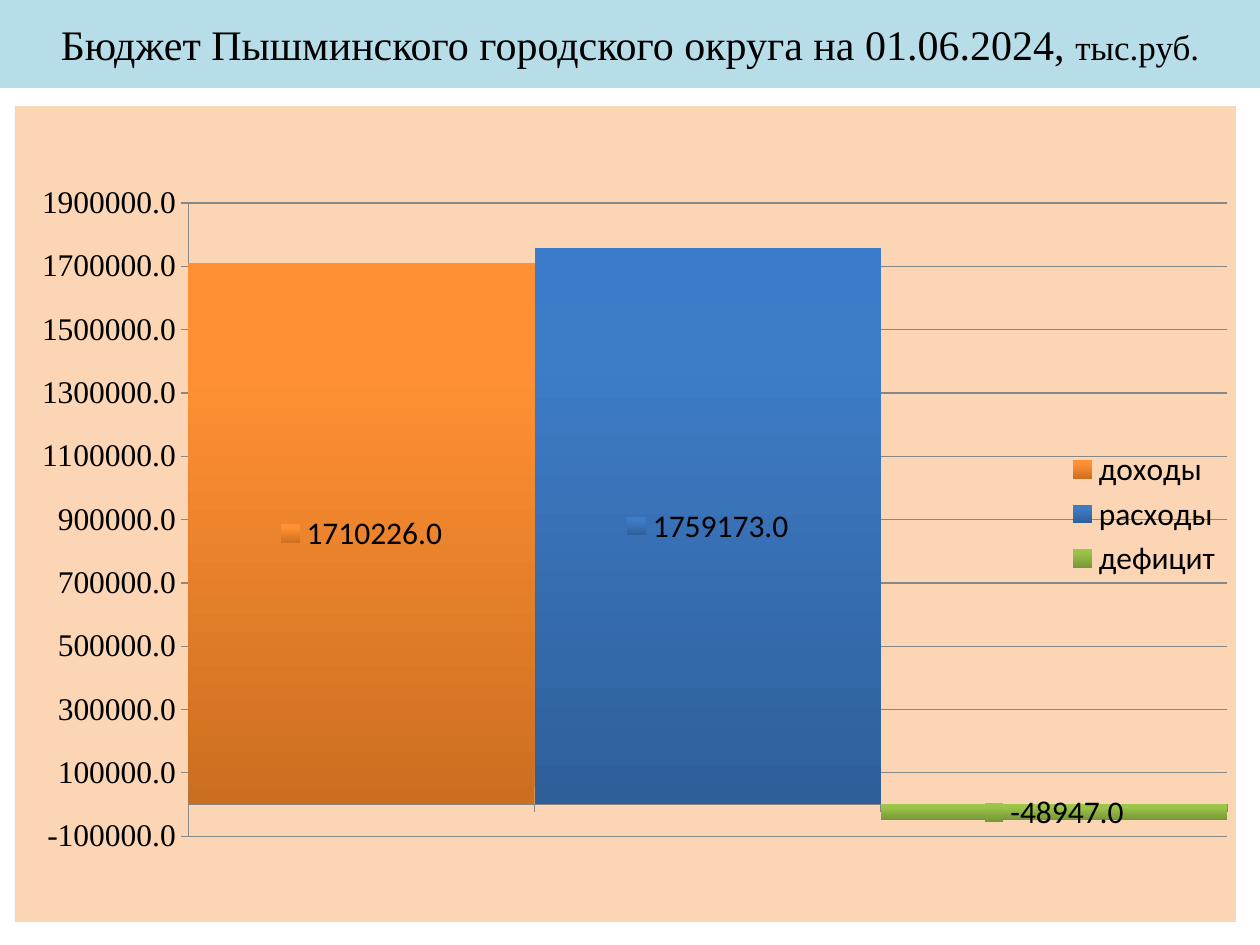
from copy import deepcopy

from lxml.etree import SubElement
from pptx import Presentation
from pptx.chart.data import CategoryChartData
from pptx.dml.color import RGBColor
from pptx.enum.chart import (XL_CHART_TYPE, XL_LABEL_POSITION,
                             XL_LEGEND_POSITION, XL_TICK_LABEL_POSITION,
                             XL_TICK_MARK)
from pptx.enum.text import MSO_ANCHOR, PP_ALIGN
from pptx.oxml import parse_xml
from pptx.oxml.ns import nsdecls, qn
from pptx.util import Pt

EMU_PER_PX = 914400 / 126
SERIF = "Times New Roman"
BUDGET = {"доходы": 1710226, "расходы": 1759173, "дефицит": -48947}
GRADIENTS = [
    ("CC6E20", "FF9034", "FF9136"),
    ("2F5F99", "3D7CC7", "3A7CCB"),
    ("779737", "9BC348", "9DC746"),
]
STOPS = (0, 0.8, 1)
PLOT_LAYOUT = {"x": 0.142, "y": 0.119, "w": 0.851, "h": 0.776}


def px(*lengths):
    return [round(length * EMU_PER_PX) for length in lengths]


def color(hex_text):
    return RGBColor.from_string(hex_text)


def set_font(font, size, name):
    font.size = Pt(size)
    font.name = name
    font.color.rgb = color("000000")


def set_line(line, hex_text):
    line.color.rgb = color(hex_text)
    line.width = Pt(0.75)


def add_title(page):
    title = page.shapes.title
    title.left, title.top, title.width, title.height = px(0, 0, 1260, 88)
    title.fill.solid()
    title.fill.fore_color.rgb = color("B7DEE8")
    frame = title.text_frame
    frame.word_wrap = True
    frame.vertical_anchor = MSO_ANCHOR.MIDDLE
    para = frame.paragraphs[0]
    para.alignment = PP_ALIGN.CENTER
    for text, size in (("Бюджет Пышминского городского округа на 01.06.2024, ", 24),
                       ("тыс.руб.", 20)):
        span = para.add_run()
        span.text = text
        set_font(span.font, size, SERIF)


def fill_columns(series):
    """Give each column its own three-stop vertical gradient."""
    for index, colors in enumerate(GRADIENTS):
        fill = series.points[index].format.fill
        fill.gradient()
        fill.gradient_angle = 90
    for stop_list in series._element.iter(qn("a:gsLst")):
        stop_list.append(deepcopy(stop_list[-1]))
    for index, colors in enumerate(GRADIENTS):
        stops = series.points[index].format.fill.gradient_stops
        for stop, position, hex_text in zip(stops, STOPS, colors):
            stop.position = position
            stop.color.rgb = color(hex_text)


def format_axes(chart):
    category_axis, value_axis = chart.category_axis, chart.value_axis
    category_axis.tick_label_position = XL_TICK_LABEL_POSITION.NONE
    value_axis.minimum_scale = -100000
    value_axis.maximum_scale = 1900000
    value_axis.major_unit = 200000
    value_axis.has_major_gridlines = True
    set_line(value_axis.major_gridlines.format.line, "878787")
    set_font(value_axis.tick_labels.font, 18, SERIF)
    value_axis.tick_labels.number_format = "0.0"
    value_axis.tick_labels.number_format_is_linked = False
    for axis in (category_axis, value_axis):
        axis.major_tick_mark = XL_TICK_MARK.OUTSIDE
        set_line(axis.format.line, "878787")


def format_labels(plot):
    plot.has_data_labels = True
    labels = plot.data_labels
    labels.show_value = True
    labels.show_legend_key = True
    labels.position = XL_LABEL_POSITION.CENTER
    labels.number_format = "0.0"
    labels.number_format_is_linked = False


def set_background(chart, hex_text):
    """Fill the chart area and leave the plot area clear."""
    space = chart._chartSpace
    space.find(qn("c:txPr")).addprevious(parse_xml(
        f'<c:spPr {nsdecls("c", "a")}><a:solidFill><a:srgbClr val="{hex_text}"/>'
        '</a:solidFill><a:ln><a:noFill/></a:ln></c:spPr>'))
    area = space.chart.plotArea
    area.append(parse_xml(
        f'<c:spPr {nsdecls("c", "a")}><a:noFill/></c:spPr>'))


def place_plot(chart):
    area = chart._chartSpace.chart.plotArea
    for old in area.findall(qn("c:layout")):
        area.remove(old)
    layout = parse_xml(f'<c:layout {nsdecls("c")}/>')
    manual = SubElement(layout, qn("c:manualLayout"))
    settings = {"layoutTarget": "inner", "xMode": "edge", "yMode": "edge",
                **PLOT_LAYOUT}
    for tag, value in settings.items():
        SubElement(manual, qn(f"c:{tag}")).set("val", str(value))
    area.insert(0, layout)


def add_budget_chart(page):
    data = CategoryChartData()
    data.categories = list(BUDGET)
    data.add_series("Series 1", list(BUDGET.values()))
    chart = page.shapes.add_chart(
        XL_CHART_TYPE.COLUMN_CLUSTERED, *px(15, 106, 1221, 816), data).chart
    set_font(chart.font, 18, "Calibri")
    chart.has_title = False
    chart.has_legend = True
    chart.legend.position = XL_LEGEND_POSITION.RIGHT
    chart.legend.include_in_layout = True
    plot = chart.plots[0]
    plot.vary_by_categories = True
    plot.gap_width = 0
    plot.series[0].invert_if_negative = False
    fill_columns(plot.series[0])
    format_labels(plot)
    format_axes(chart)
    set_background(chart, "FCD5B5")
    place_plot(chart)


def main():
    deck = Presentation()
    deck.slide_width, deck.slide_height = px(1260, 945)
    page = deck.slides.add_slide(deck.slide_layouts[5])
    add_title(page)
    add_budget_chart(page)
    deck.save("out.pptx")


if __name__ == "__main__":
    main()
